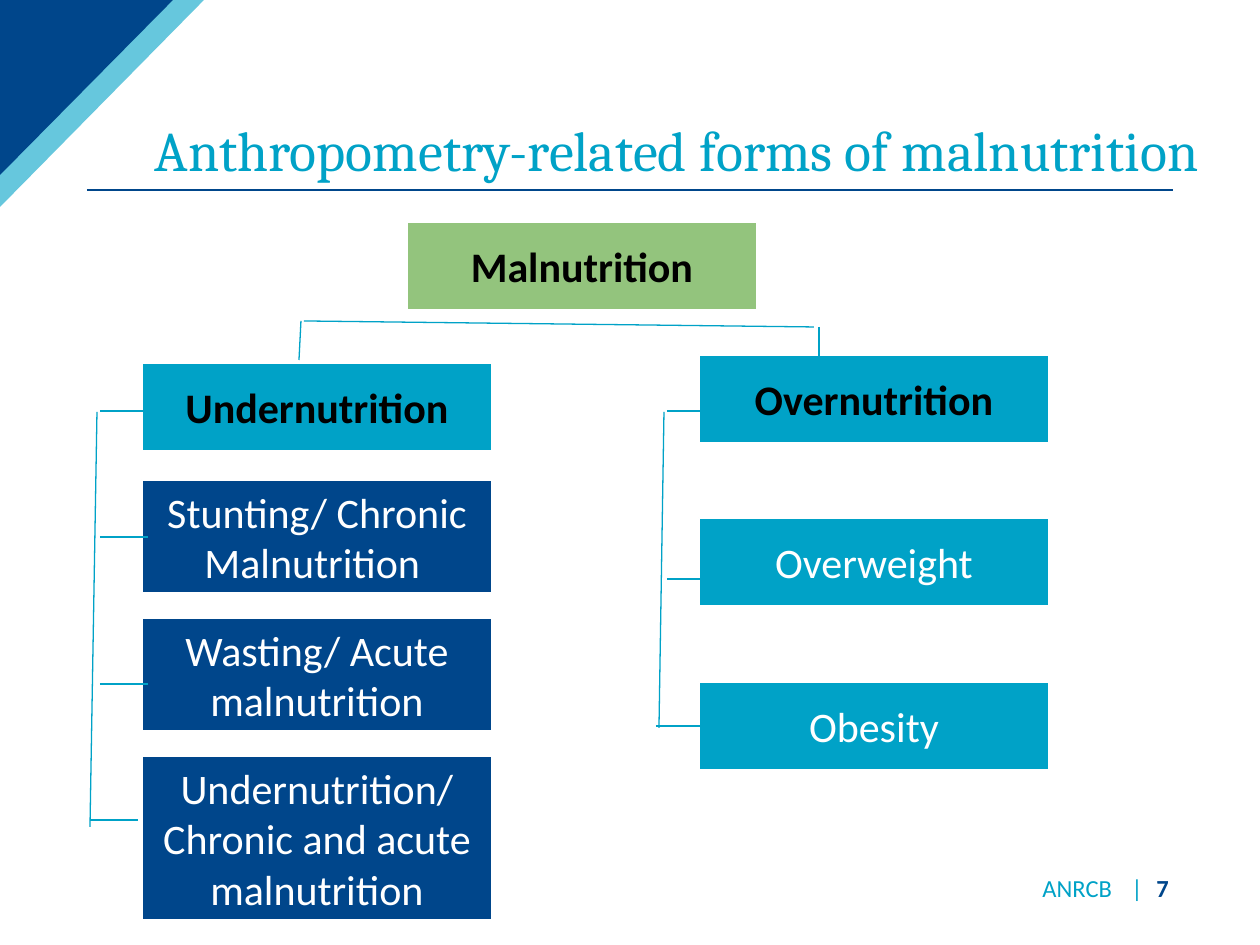
from lxml.etree import SubElement
from pptx import Presentation
from pptx.dml.color import RGBColor
from pptx.enum.shapes import MSO_CONNECTOR, MSO_SHAPE
from pptx.enum.text import MSO_ANCHOR, PP_ALIGN
from pptx.oxml.ns import qn
from pptx.util import Emu, Pt

NAVY = RGBColor(0x00, 0x46, 0x8B)
TEAL = RGBColor(0x00, 0xA2, 0xC7)
GREEN = RGBColor(0x93, 0xC4, 0x7D)
BLACK = RGBColor(0x00, 0x00, 0x00)
WHITE = RGBColor(0xFF, 0xFF, 0xFF)

WIDE = 350  # box width
TALL = 88  # height of a one-line box
TICK = 48  # length of a branch
LEFT, MID, RIGHT = 142, 407, 699  # left edges of the boxes


def px(n):
    """Turn pixels, 126 to the inch, into EMU."""
    return Emu(round(n * 914400 / 126))


def add_run(para, text, size, color, bold=False, face="Calibri"):
    run = para.add_run()
    run.text = text
    font = run.font
    font.name, font.size, font.bold = face, Pt(size), bold
    font.color.rgb = color


def add_line(slide, x1, y1, x2, y2, color=TEAL):
    line = slide.shapes.add_connector(
        MSO_CONNECTOR.STRAIGHT, px(x1), px(y1), px(x2), px(y2))
    line.line.color.rgb = color
    line.line.width = Pt(0.75)
    SubElement(line._element.spPr, qn("a:effectLst"))


def add_corner(slide, wide, tall, color, alpha=100):
    """Fill the top left corner with a triangle; alpha is in percent."""
    pen = slide.shapes.build_freeform(0, 0, scale=px(1))
    pen.add_line_segments([(wide, 0), (0, tall)], close=True)
    shape = pen.convert_to_shape()
    shape.shadow.inherit = False
    shape.line.fill.background()
    shape.fill.solid()
    shape.fill.fore_color.rgb = color
    if alpha < 100:
        tint = shape._element.spPr.find(qn("a:solidFill"))[0]
        SubElement(tint, qn("a:alpha"), val=str(alpha * 1000))


def add_title(slide, text):
    title = slide.shapes.title
    title.left, title.top = px(142), px(50)
    title.width, title.height = px(1106), px(140)
    frame = title.text_frame
    frame.word_wrap = True
    frame.vertical_anchor = MSO_ANCHOR.BOTTOM
    para = frame.paragraphs[0]
    para.alignment = PP_ALIGN.LEFT
    para.line_spacing = 0.9
    add_run(para, text, 32, TEAL, face="Cambria")


def add_box(slide, text, x, y, fill, color=WHITE, tall=TALL, bold=False):
    box = slide.shapes.add_shape(
        MSO_SHAPE.RECTANGLE, px(x), px(y), px(WIDE), px(tall))
    box.shadow.inherit = False
    box.fill.solid()
    box.fill.fore_color.rgb = fill
    box.line.color.rgb = WHITE
    box.line.width = Pt(0.75)
    frame = box.text_frame
    frame.word_wrap = True
    frame.vertical_anchor = MSO_ANCHOR.MIDDLE
    para = frame.paragraphs[0]
    para.alignment = PP_ALIGN.CENTER
    add_run(para, text, 24, color, bold)


def add_footer(slide):
    box = slide.shapes.add_textbox(px(1030), px(875), px(180), px(26))
    frame = box.text_frame
    frame.word_wrap = True
    frame.vertical_anchor = MSO_ANCHOR.MIDDLE
    para = frame.paragraphs[0]
    para.alignment = PP_ALIGN.LEFT
    tabs = SubElement(para._p.get_or_add_pPr(), qn("a:tabLst"))
    for stop in (89, 114):
        SubElement(tabs, qn("a:tab"), pos=str(px(stop)), algn="l")
    add_run(para, "ANRCB\t|\t", 14, TEAL)
    add_run(para, "7", 14, NAVY, bold=True)


def add_tree(slide):
    heads = [
        ("Malnutrition", MID, 222, GREEN),
        ("Undernutrition", LEFT, 363, TEAL),
        ("Overnutrition", RIGHT, 355, TEAL),
    ]
    for text, x, y, fill in heads:
        add_box(slide, text, x, y, fill, BLACK, bold=True)
    leaves = [
        ("Stunting/ Chronic Malnutrition ", LEFT, 480, NAVY, 113),
        ("Wasting/ Acute malnutrition", LEFT, 618, NAVY, 113),
        ("Undernutrition/ Chronic and acute malnutrition",
         LEFT, 756, NAVY, 164),
        ("Overweight", RIGHT, 518, TEAL, TALL),
        ("Obesity", RIGHT, 682, TEAL, TALL),
    ]
    for text, x, y, fill, tall in leaves:
        add_box(slide, text, x, y, fill, tall=tall)

    stems = [
        (304, 321, 814, 327), (301, 321, 299, 360), (819, 327, 819, 365),
        (97, 412, 90, 827), (664, 412, 659, 728),
    ]
    for ends in stems:
        add_line(slide, *ends)
    ticks = [
        (100, 411), (100, 537), (100, 684), (90, 820),
        (667, 411), (667, 579), (656, 726),
    ]
    for x, y in ticks:
        add_line(slide, x, y, x + TICK, y)


def main():
    deck = Presentation()
    deck.slide_width, deck.slide_height = px(1260), px(945)
    slide = deck.slides.add_slide(deck.slide_layouts[5])
    add_line(slide, 87, 190, 1173, 190, NAVY)
    add_corner(slide, 204, 207, TEAL, alpha=60)
    add_corner(slide, 173, 175, NAVY)
    add_title(slide, "Anthropometry-related forms of malnutrition")
    add_footer(slide)
    add_tree(slide)
    deck.save("out.pptx")


if __name__ == "__main__":
    main()
